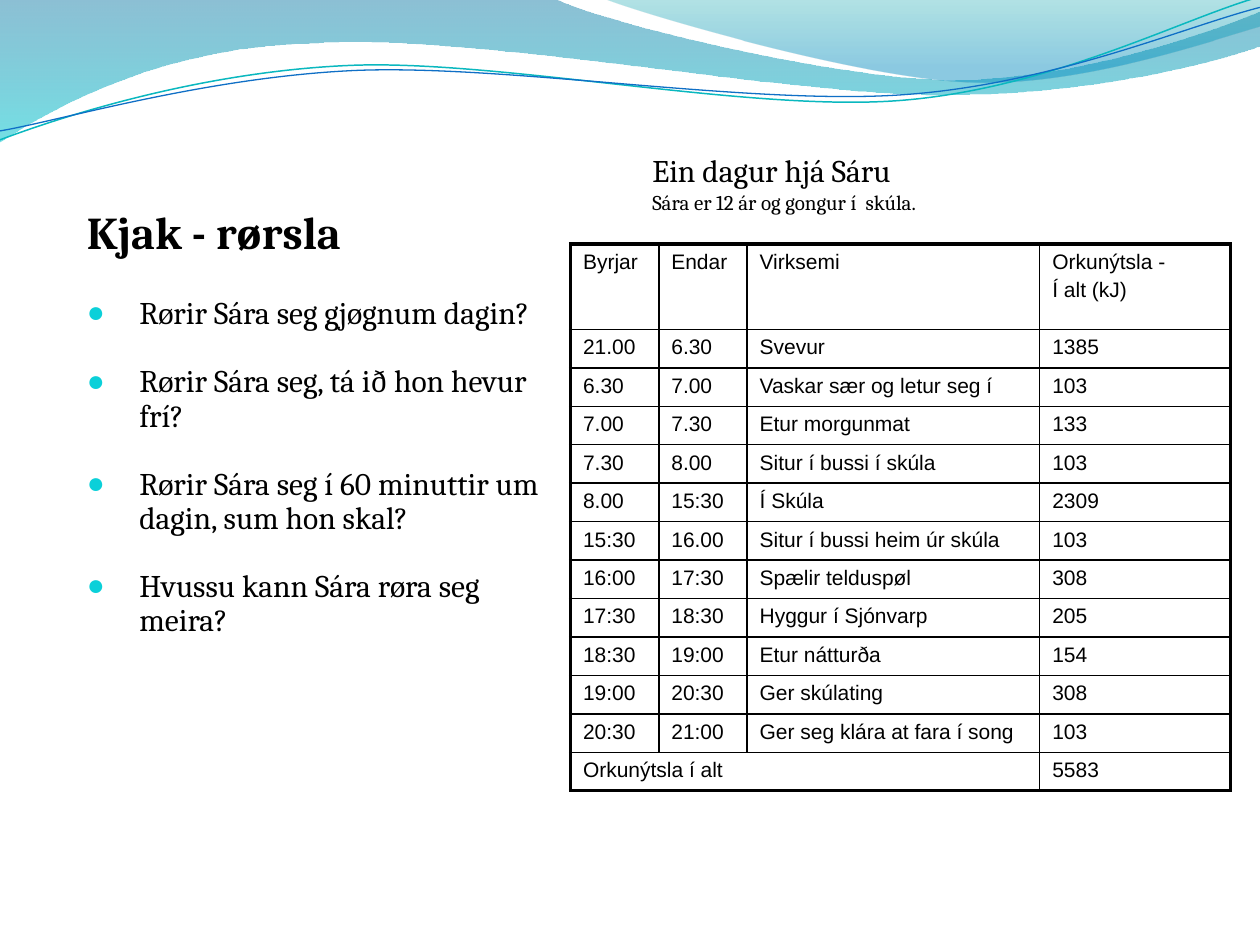
"""Build a slide with discussion questions about exercise beside a day's energy table."""
from dataclasses import dataclass
from lxml import etree
from pptx import Presentation
from pptx import util as u
from pptx.dml.color import RGBColor
from pptx.enum import text
from pptx.oxml.ns import qn


@dataclass(frozen=True)
class Theme:
    ink: str = "000000"
    bullet: str = "0BD0D9"
    back_wave: tuple = ((0, "0074A1", 45), (1, "00C6CF", 55))
    front_wave: tuple = ((0, "00A1A9", 30), (0.8, "008BBF", 45))
    teal_line: str = "0AB8BF"
    blue_line: str = "0F6FC6"
    serif: str = "Cambria"
    sans: str = "Arial"
    heading: int = 26
    body: int = 18
    small: int = 12
    outer_border: float = 2.25
    inner_border: float = 1


theme = Theme()


def draw_curve(shapes, start, segments, closed):
    builder = shapes.build_freeform(u.Cm(start[0]), u.Cm(start[1]))
    ends = [segment[-1] for segment in segments]
    builder.add_line_segments([(u.Cm(x), u.Cm(y)) for x, y in ends], close=closed)
    curve = builder.convert_to_shape()
    curve.shadow.inherit = False
    for straight, segment in zip(list(curve.element.iter(qn("a:lnTo"))), segments):
        if len(segment) == 3:
            bend = etree.Element(qn("a:cubicBezTo"))
            for x, y in segment:
                etree.SubElement(bend, qn("a:pt"), x=str(u.Cm(x) - curve.left), y=str(u.Cm(y) - curve.top))
            straight.getparent().replace(straight, bend)
    return curve


def style_paragraph(paragraph, face, size, bold=False):
    paragraph.font.name = face
    paragraph.font.size = u.Pt(size)
    paragraph.font.bold = bold
    paragraph.font.color.rgb = RGBColor.from_string(theme.ink)


deck = Presentation()
deck.slide_width, deck.slide_height = u.Cm(25.4), u.Cm(19.05)
slide = deck.slides.add_slide(deck.slide_layouts[6])

waves = [
    (theme.back_wave, (0, 0), [
        [(11.18, -0.03)],
        [(12.09, 0.43), (16.87, 1.6), (19.25, 1.6)],
        [(21.67, 1.6), (24.33, 0.66), (25.4, 0.23)],
        [(25.43, 0.91)],
        [(24.97, 1.12), (22.1, 1.93), (18.95, 1.91)],
        [(15.8, 1.91), (9.7, 0.71), (6.53, 0.86)],
        [(3.28, 0.91), (1.17, 2.11), (-0.03, 2.87)],
        [(0, 0)],
    ]),
    (theme.front_wave, (12.17, -0.03), [
        [(12.93, 0.28), (17.32, 1.57), (19.53, 1.65)],
        [(21.74, 1.75), (24.41, 0.81), (25.4, 0.53)],
        [(25.4, 0)],
        [(12.17, -0.03)],
    ]),
]
for stops, start, segments in waves:
    wave = draw_curve(slide.shapes, start, segments, True)
    wave.line.fill.background()
    wave.fill.gradient()
    wave.fill.gradient_angle = 270
    for stop, (position, color, opacity) in zip(wave.fill.gradient_stops, stops):
        stop.position = position
        stop.color.rgb = RGBColor.from_string(color)
    for tint, (position, color, opacity) in zip(wave.element.iter(qn("a:srgbClr")), stops):
        etree.SubElement(tint, qn("a:alpha"), val=str(opacity * 1000))

ripples = [
    (theme.teal_line, 0.85, (0, 2.82), [
        [(1.22, 2.36), (4.01, 1.45), (7.04, 1.32)],
        [(10.03, 1.19), (15.06, 2.26), (18.11, 2.03)],
        [(21.16, 1.8), (23.83, 0.38), (25.35, -0.05)],
    ]),
    (theme.blue_line, 0.75, (0, 2.64), [
        [(1.19, 2.44), (4.17, 1.55), (7.19, 1.42)],
        [(10.24, 1.3), (15.16, 2.13), (18.21, 1.91)],
        [(21.23, 1.7), (23.9, 0.53), (25.4, 0.15)],
    ]),
]
for color, width, start, segments in ripples:
    ripple = draw_curve(slide.shapes, start, segments, False)
    ripple.fill.background()
    ripple.line.color.rgb = RGBColor.from_string(color)
    ripple.line.width = u.Pt(width)

discussion = slide.shapes.add_textbox(u.Cm(1.5), u.Cm(4.12), u.Cm(9.63), u.Cm(12.57)).text_frame
discussion.word_wrap = True
discussion.text = "\n".join([
    "Kjak - rørsla",
    "Rørir Sára seg gjøgnum dagin?",
    "Rørir Sára seg, tá ið hon hevur frí?",
    "Rørir Sára seg í 60 minuttir um dagin, sum hon skal?",
    "Hvussu kann Sára røra seg meira?",
])
heading, *questions = discussion.paragraphs
style_paragraph(heading, theme.serif, theme.heading, True)
heading.space_after = u.Pt(2)
for question in questions:
    style_paragraph(question, theme.serif, theme.body)
    question.space_before = u.Pt(19.6)
for paragraph in discussion.paragraphs:
    paragraph.line_spacing = 0.9
    layout = paragraph._p.get_or_add_pPr()
    layout.set("marL", str(u.Cm(1.06)))
    layout.set("indent", str(-u.Cm(1.06)))
for question in questions:
    bullet_color = etree.Element(qn("a:buClr"))
    etree.SubElement(bullet_color, qn("a:srgbClr"), val=theme.bullet)
    bullet_size = etree.Element(qn("a:buSzPct"), val="95000")
    bullet_face = etree.Element(qn("a:buFont"), typeface=theme.sans)
    bullet = etree.Element(qn("a:buChar"), char="●")
    for position, part in enumerate((bullet_color, bullet_size, bullet_face, bullet), 2):
        question._p.get_or_add_pPr().insert(position, part)

day = [
    ("Byrjar", "Endar", "Virksemi", "Orkunýtsla -\nÍ alt (kJ)"),
    ("21.00", "6.30", "Svevur", "1385"),
    ("6.30", "7.00", "Vaskar sær og letur seg í", "103"),
    ("7.00", "7.30", "Etur morgunmat", "133"),
    ("7.30", "8.00", "Situr í bussi í skúla", "103"),
    ("8.00", "15:30", "Í Skúla", "2309"),
    ("15:30", "16.00", "Situr í bussi heim úr skúla", "103"),
    ("16:00", "17:30", "Spælir telduspøl", "308"),
    ("17:30", "18:30", "Hyggur í Sjónvarp", "205"),
    ("18:30", "19:00", "Etur nátturða", "154"),
    ("19:00", "20:30", "Ger skúlating", "308"),
    ("20:30", "21:00", "Ger seg klára at fara í song", "103"),
    ("Orkunýtsla í alt", "", "", "5583"),
]
widths = [1.78, 1.78, 5.9, 3.84]
height, header_height = 11.03, 1.72
last_row, last_column = len(day) - 1, len(widths) - 1
energy = slide.shapes.add_table(
    len(day), len(widths), u.Cm(11.5), u.Cm(4.92), u.Cm(sum(widths)), u.Cm(height)
).table
energy.first_row = energy.horz_banding = False
for column, width in zip(energy.columns, widths):
    column.width = u.Cm(width)
for r, entries in enumerate(day):
    energy.rows[r].height = u.Cm((height - header_height) / last_row if r else header_height)
    for c, entry in enumerate(entries):
        cell = energy.cell(r, c)
        cell.text = entry
        cell.fill.background()
        for line, paragraph in enumerate(cell.text_frame.paragraphs):
            style_paragraph(paragraph, theme.sans, theme.small)
            paragraph.space_before = u.Pt(0.2 * theme.small if line else 0)
        edges = {"a:lnL": c == 0, "a:lnR": c == last_column, "a:lnT": r == 0, "a:lnB": r == last_row}
        for position, (edge, outer) in enumerate(edges.items()):
            weight = theme.outer_border if outer else theme.inner_border
            border = etree.Element(qn(edge), w=str(u.Pt(weight)))
            paint = etree.SubElement(border, qn("a:solidFill"))
            etree.SubElement(paint, qn("a:srgbClr"), val=theme.ink)
            cell._tc.get_or_add_tcPr().insert(position, border)
energy.cell(last_row, 0).merge(energy.cell(last_row, 2))

caption = slide.shapes.add_textbox(u.Cm(12.9), u.Cm(2.93), u.Cm(11.81), u.Cm(1.55)).text_frame
caption.word_wrap = True
caption.auto_size = text.MSO_AUTO_SIZE.SHAPE_TO_FIT_TEXT
caption.text = "Ein dagur hjá Sáru\nSára er 12 ár og gongur í  skúla."
for paragraph, size in zip(caption.paragraphs, (theme.body, theme.small)):
    style_paragraph(paragraph, theme.serif, size)

deck.save("out.pptx")
